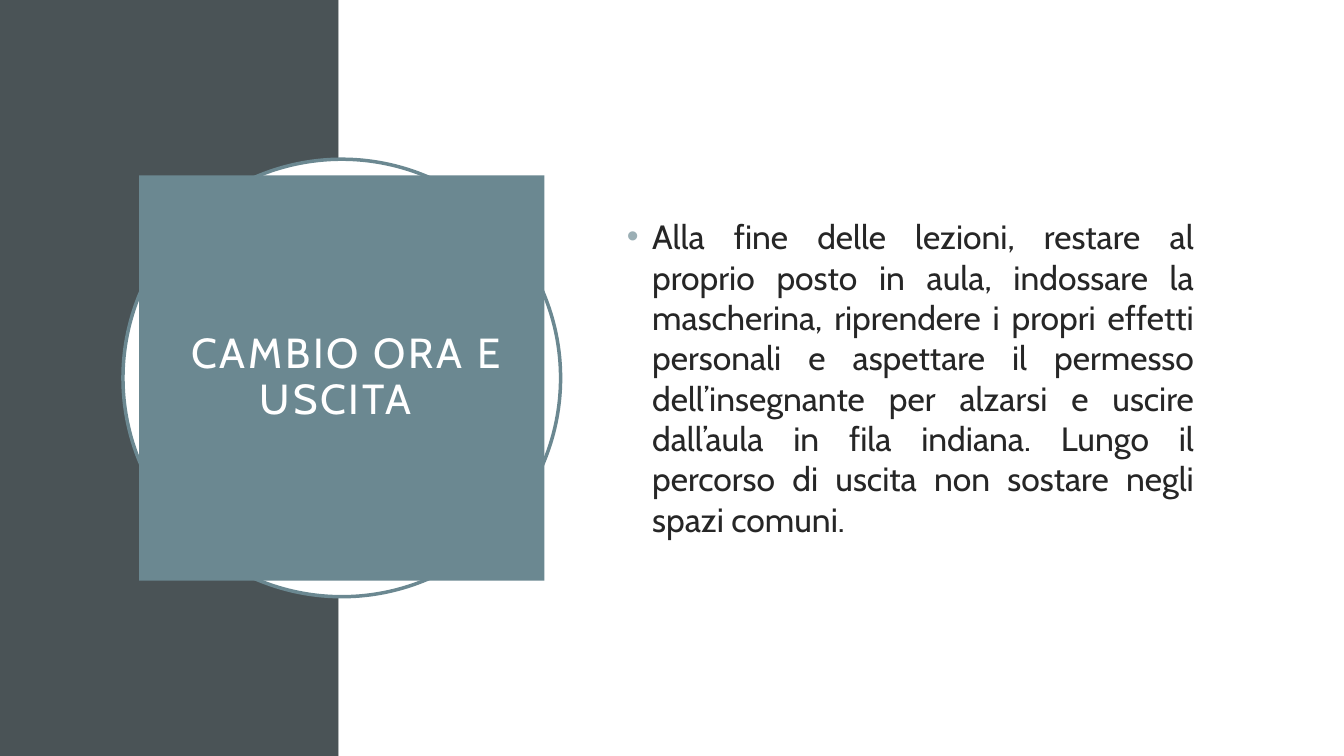
from lxml import etree
from pptx import Presentation
from pptx.dml.color import RGBColor
from pptx.enum.shapes import MSO_SHAPE
from pptx.enum.text import MSO_ANCHOR, PP_ALIGN
from pptx.oxml.ns import qn
from pptx.util import Inches, Pt

RECTANGLE, OVAL = MSO_SHAPE.RECTANGLE, MSO_SHAPE.OVAL
MIDDLE = MSO_ANCHOR.MIDDLE
CENTER, JUSTIFY = PP_ALIGN.CENTER, PP_ALIGN.JUSTIFY

SLIDE_W, SLIDE_H = 13.33, 7.5
BAND_W = 3.36
FONT = "Cabin"
COLORS = {
    "band": "4A5356",
    "paper": "FFFFFF",
    "accent": "6B8891",
    "bullet": "9BAFB5",
    "body": "262626",
}
TITLE = " CAMBIO ORA E USCITA\u00a0".replace("\u00a0", " ")
BODY = (
    "Alla fine delle lezioni, restare al proprio posto in aula, indossare la "
    "mascherina, riprendere i propri effetti personali e aspettare il permesso "
    "dell’insegnante per alzarsi e uscire dall’aula in fila indiana. Lungo il "
    "percorso di uscita non sostare negli spazi comuni."
)


def rgb(name):
    return RGBColor.from_string(COLORS[name])


def add_panel(slide, kind, box, fill, outline=None):
    panel = slide.shapes.add_shape(kind, *map(Inches, box))
    panel.shadow.inherit = False
    panel.fill.solid()
    panel.fill.fore_color.rgb = rgb(fill)
    if outline:
        panel.line.color.rgb = rgb(outline)
        panel.line.width = Pt(2.5)
    else:
        panel.line.fill.background()
    return panel


def write_paragraph(frame, text, size, color, alignment):
    frame.word_wrap = True
    frame.vertical_anchor = MIDDLE
    frame.text = text
    paragraph = frame.paragraphs[0]
    paragraph.alignment = alignment
    font = paragraph.runs[0].font
    font.name = FONT
    font.size = Pt(size)
    font.color.rgb = rgb(color)
    return paragraph


def add_bullet(paragraph, indent):
    properties = paragraph._p.get_or_add_pPr()
    properties.set("marL", str(Inches(indent)))
    properties.set("indent", str(-Inches(indent)))
    bullet_color = etree.SubElement(properties, qn("a:buClr"))
    etree.SubElement(bullet_color, qn("a:srgbClr"), val=COLORS["bullet"])
    etree.SubElement(properties, qn("a:buFont"), typeface="Arial")
    etree.SubElement(properties, qn("a:buChar"), char="•")


def add_background(slide, box):
    left, top, width, height = box
    add_panel(slide, RECTANGLE, (left, top, BAND_W, height), "band")
    add_panel(slide, RECTANGLE, (left + BAND_W, top, width - BAND_W, height), "paper")


def add_title_badge(slide, box):
    """Place a ring that fills the box and the title square centred in it."""
    left, top, diameter, _ = box
    gap = 0.16
    side = diameter - 2 * gap
    add_panel(slide, OVAL, box, "paper", outline="accent")
    square = add_panel(slide, RECTANGLE, (left + gap, top + gap, side, side), "accent")
    frame = square.text_frame
    frame.margin_left = frame.margin_right = Inches(0.2)
    frame.margin_top = frame.margin_bottom = Inches(0.2)
    heading = write_paragraph(frame, TITLE, 30, "paper", CENTER)
    heading.line_spacing = 0.9
    heading.runs[0].font._element.set("spc", "200")


def add_instructions(slide, box):
    frame = slide.shapes.add_textbox(*map(Inches, box)).text_frame
    instructions = write_paragraph(frame, BODY, 24, "body", JUSTIFY)
    instructions.space_before = Pt(10)
    add_bullet(instructions, 0.25)


def main():
    deck = Presentation()
    deck.slide_width, deck.slide_height = Inches(SLIDE_W), Inches(SLIDE_H)
    slide = deck.slides.add_slide(deck.slide_layouts[6])
    add_background(slide, (0, 0, SLIDE_W, SLIDE_H))
    add_title_badge(slide, (1.22, 1.58, 4.34, 4.34))
    add_instructions(slide, (6.12, 1.53, 5.82, 4.43))
    deck.save("out.pptx")


if __name__ == "__main__":
    main()
